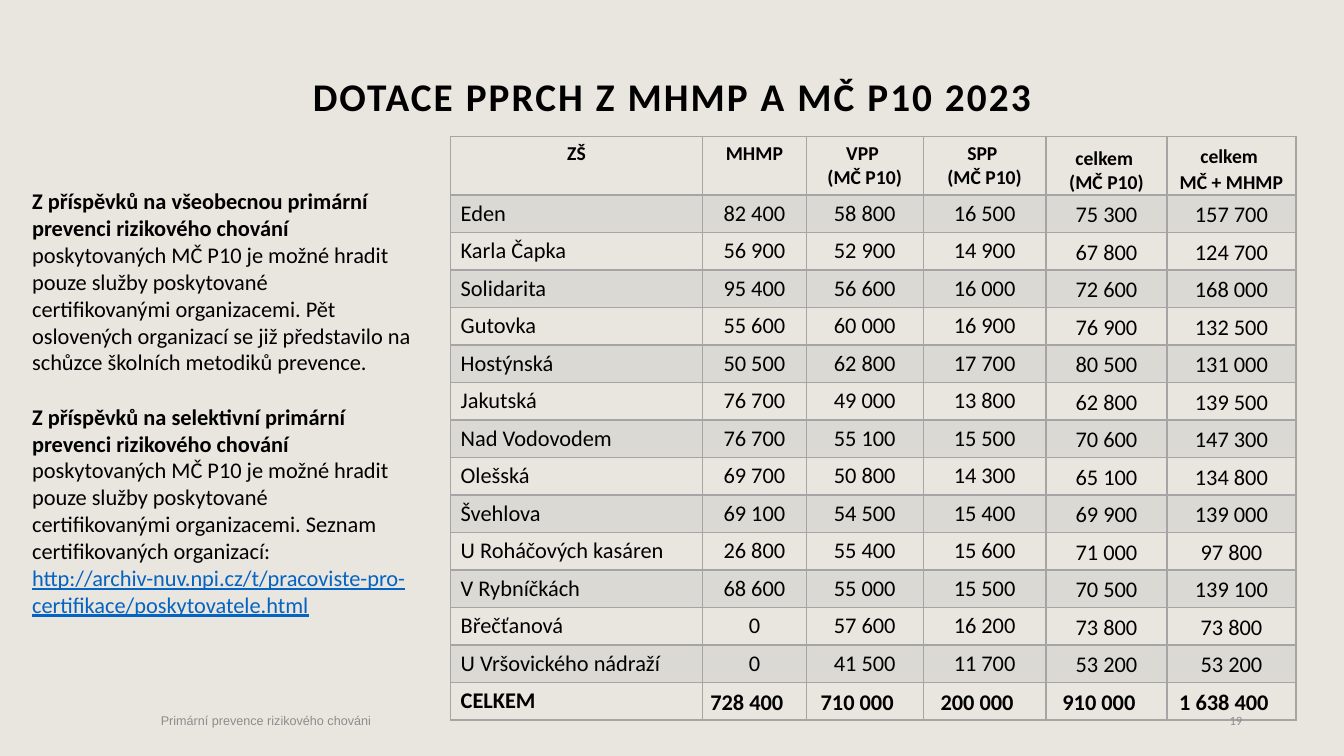
from dataclasses import dataclass

from lxml import etree
from pptx import Presentation
from pptx.dml.color import RGBColor
from pptx.enum.text import MSO_ANCHOR, PP_ALIGN
from pptx.oxml.ns import qn
from pptx.util import Inches, Pt

LEFT, CENTER, RIGHT = PP_ALIGN.LEFT, PP_ALIGN.CENTER, PP_ALIGN.RIGHT
TOP, MIDDLE, BOTTOM = MSO_ANCHOR.TOP, MSO_ANCHOR.MIDDLE, MSO_ANCHOR.BOTTOM
TITLE_ONLY = 5


@dataclass(frozen=True)
class Theme:
    background: str = "E9E6DF"
    ink: str = "000000"
    rule: str = "A5A5A5"
    muted: str = "8C8C8C"
    link: str = "0563C1"
    font: str = "Calibri"
    footer_font: str = "Arial"
    title_size: int = 28
    body_size: int = 16
    header_size: int = 14
    footer_size: int = 9
    paragraph_gap: float = 19.5
    loose_spacing: float = 1.11
    band_opacity: int = 20


class SlideBuilder:
    """Draws elements; boxes are (left, top, width, height) in percent of the slide."""

    def __init__(self, presentation, theme):
        self.theme = theme
        self.width = presentation.slide_width
        self.height = presentation.slide_height
        self.slide = presentation.slides.add_slide(presentation.slide_layouts[TITLE_ONLY])
        background = self.slide.background.fill
        background.solid()
        background.fore_color.rgb = RGBColor.from_string(theme.background)

    def place(self, box):
        left, top, width, height = (share / 100 for share in box)
        return (round(left * self.width), round(top * self.height),
                round(width * self.width), round(height * self.height))

    def run(self, paragraph, text, size, bold=False, color=None, font=None, underline=False):
        run = paragraph.add_run()
        run.text = text
        run.font.size = Pt(size)
        run.font.name = font or self.theme.font
        run.font.bold = bold
        run.font.underline = underline
        run.font.color.rgb = RGBColor.from_string(color or self.theme.ink)
        return run

    def title(self, text, box):
        shape = self.slide.shapes.title
        shape.left, shape.top, shape.width, shape.height = self.place(box)
        shape.text_frame.vertical_anchor = MIDDLE
        paragraph = shape.text_frame.paragraphs[0]
        paragraph.alignment = CENTER
        paragraph.line_spacing = 0.9
        run = self.run(paragraph, text, self.theme.title_size, bold=True)
        run.font._element.set("spc", "150")

    def text(self, paragraphs, box, size, align=LEFT, anchor=TOP):
        """Each paragraph is (space before, [(text, run style), ...])."""
        frame = self.slide.shapes.add_textbox(*self.place(box)).text_frame
        frame.word_wrap = True
        frame.vertical_anchor = anchor
        for index, (gap, runs) in enumerate(paragraphs):
            paragraph = frame.add_paragraph() if index else frame.paragraphs[0]
            paragraph.alignment = align
            if gap:
                paragraph.space_before = Pt(gap)
            for text, style in runs:
                self.run(paragraph, text, size, **style)

    def borders(self, cell, top, bottom):
        properties = cell._tc.get_or_add_tcPr()
        for side, points in (("L", 1), ("R", 1), ("T", top), ("B", bottom)):
            line = etree.SubElement(properties, qn(f"a:ln{side}"), w=str(Pt(points)))
            fill = etree.SubElement(line, qn("a:solidFill"))
            etree.SubElement(fill, qn("a:srgbClr"), val=self.theme.rule)

    def band(self, cell):
        cell.fill.solid()
        cell.fill.fore_color.rgb = RGBColor.from_string(self.theme.rule)
        color = cell._tc.tcPr.find(qn("a:solidFill")).find(qn("a:srgbClr"))
        etree.SubElement(color, qn("a:alpha"), val=str(self.theme.band_opacity * 1000))

    def cell(self, cell, text, row, column, last_row):
        header, total = row == 0, row == last_row
        self.borders(cell, top=2 if row == 1 else 1, bottom=2 if header else 1)
        if row % 2 and not total:
            self.band(cell)
        else:
            cell.fill.background()

        paragraph = cell.text_frame.paragraphs[0]
        paragraph.alignment = CENTER if header or column else LEFT
        # Sum columns and the total row are set tight, with looser lines
        if column >= 4 or (total and column):
            cell.vertical_anchor = BOTTOM if header else MIDDLE
            cell.margin_left = Inches(0.05)
            cell.margin_right = Inches(0.2 if total else 0.05)
            cell.margin_top = cell.margin_bottom = 0
            if not (header and column == 4):
                paragraph.line_spacing = self.theme.loose_spacing

        size = self.theme.header_size if header else self.theme.body_size
        for index, line in enumerate(text.split("\n")):
            if index:
                paragraph.add_line_break()
            self.run(paragraph, line, size, bold=header or total)

    def table(self, rows, box, column_weights, header_share):
        left, top, width, height = self.place(box)
        table = self.slide.shapes.add_table(
            len(rows), len(column_weights), left, top, width, height).table
        table.first_row = table.horz_banding = False
        for column, weight in zip(table.columns, column_weights):
            column.width = round(width * weight / sum(column_weights))
        header_height = round(height * header_share)
        for index, row in enumerate(table.rows):
            row.height = (round((height - header_height) / (len(rows) - 1))
                          if index else header_height)
        for row, values in enumerate(rows):
            for column, value in enumerate(values):
                self.cell(table.cell(row, column), value, row, column, len(rows) - 1)


GRANTS = [
    ("ZŠ", "MHMP", "VPP \n(MČ P10)", "SPP \n(MČ P10)", "celkem \n(MČ P10)", "celkem \nMČ + MHMP"),
    ("Eden", "82 400", "58 800", "16 500", "75 300", "157 700"),
    ("Karla Čapka", "56 900", "52 900", "14 900", "67 800", "124 700"),
    ("Solidarita", "95 400", "56 600", "16 000", "72 600", "168 000"),
    ("Gutovka", "55 600", "60 000", "16 900", "76 900", "132 500"),
    ("Hostýnská", "50 500", "62 800", "17 700", "80 500", "131 000"),
    ("Jakutská", "76 700", "49 000", "13 800", "62 800", "139 500"),
    ("Nad Vodovodem", "76 700", "55 100", "15 500", "70 600", "147 300"),
    ("Olešská", "69 700", "50 800", "14 300", "65 100", "134 800"),
    ("Švehlova", "69 100", "54 500", "15 400", "69 900", "139 000"),
    ("U Roháčových kasáren", "26 800", "55 400", "15 600", "71 000", "97 800"),
    ("V Rybníčkách", "68 600", "55 000", "15 500", "70 500", "139 100"),
    ("Břečťanová", "0", "57 600", "16 200", "73 800", "73 800"),
    ("U Vršovického nádraží", "0", "41 500", "11 700", "53 200", "53 200"),
    ("CELKEM", "728 400", "710 000", "200 000", "910 000", "1 638 400"),
]


def main():
    theme = Theme()
    presentation = Presentation()
    presentation.slide_width, presentation.slide_height = Inches(13.33), Inches(7.5)
    builder = SlideBuilder(presentation, theme)

    # Title
    builder.title("DOTACE PPRCH Z MHMP A MČ P10 2023", (6.9, 4.8, 86.25, 16.67))

    # Grants by school
    builder.table(GRANTS, (33.53, 18.07, 62.9, 77.2),
                  column_weights=(2.5, 1.03, 1.16, 1.22, 1.2, 1.28), header_share=0.1)

    # Footer and slide number
    builder.text([(0, [("Primární prevence rizikového chováni",
                        {"color": theme.muted, "font": theme.footer_font})])],
                 (5.48, 92.67, 28.6, 5.33), theme.footer_size, CENTER, MIDDLE)
    builder.text([(0, [("19", {"color": theme.muted})])],
                 (70.67, 92.67, 22.5, 5.33), theme.footer_size, RIGHT, MIDDLE)

    # Rules for using the grants
    shared = " poskytovaných MČ P10 je možné hradit pouze služby poskytované certifikovanými organizacemi. "
    builder.text([
        (0, [("Z příspěvků na všeobecnou primární prevenci rizikového chování", {"bold": True}),
             (shared + "Pět oslovených organizací se již představilo na schůzce školních "
              "metodiků prevence.", {})]),
        (theme.paragraph_gap,
         [("Z příspěvků na selektivní primární prevenci rizikového chování", {"bold": True}),
          (shared + "Seznam certifikovaných organizací:", {})]),
        (0, [("http://archiv-nuv.npi.cz/t/pracoviste-pro-certifikace/poskytovatele.html",
              {"color": theme.link, "underline": True})]),
    ], (1.65, 24.13, 29.7, 58.8), theme.body_size)

    presentation.save("out.pptx")


if __name__ == "__main__":
    main()
